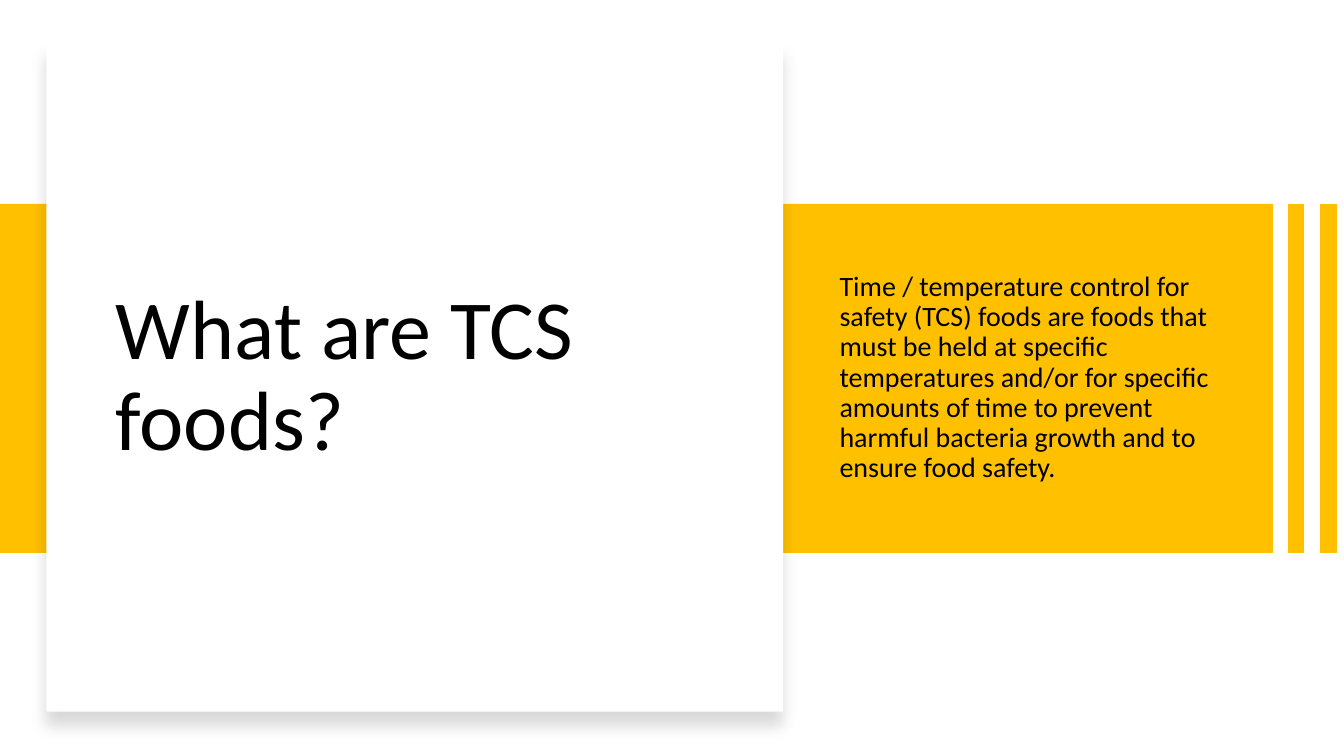
from dataclasses import dataclass

from lxml.etree import SubElement
from pptx import Presentation
from pptx.dml.color import RGBColor
from pptx.enum.shapes import MSO_CONNECTOR, MSO_SHAPE
from pptx.enum.text import MSO_ANCHOR
from pptx.oxml.ns import qn
from pptx.util import Pt


@dataclass(frozen=True)
class Theme:
    font: str = "Calibri"
    title_size: float = 60
    body_size: float = 20
    line_spacing: float = 0.9
    text: str = "000000"
    band: str = "FFC000"
    card: str = "FFFFFF"
    shadow: str = "000000"


class SlideBuilder:
    def __init__(self, page, theme):
        self.page = page
        self.theme = theme

    def rectangle(self, left, top, width, height, color):
        shape = self.page.shapes.add_shape(
            MSO_SHAPE.RECTANGLE, Pt(left), Pt(top), Pt(width), Pt(height))
        shape.shadow.inherit = False
        shape.fill.solid()
        shape.fill.fore_color.rgb = RGBColor.from_string(color)
        shape.line.fill.background()
        return shape

    def drop_shadow(self, shape, blur, distance, opacity):
        """Cast a soft shadow straight down; opacity is in percent."""
        effects = shape._element.spPr.find(qn("a:effectLst"))
        shadow = SubElement(
            effects, qn("a:outerShdw"), blurRad=str(Pt(blur)),
            dist=str(Pt(distance)), dir=str(90 * 60000),
            algn="t", rotWithShape="0")
        color = SubElement(shadow, qn("a:srgbClr"), val=self.theme.shadow)
        SubElement(color, qn("a:alpha"), val=str(opacity * 1000))

    def vertical_line(self, x, top, height, width, color):
        line = self.page.shapes.add_connector(
            MSO_CONNECTOR.STRAIGHT, Pt(x), Pt(top), Pt(x), Pt(top + height))
        line.line.color.rgb = RGBColor.from_string(color)
        line.line.width = Pt(width)
        SubElement(line._element.spPr, qn("a:effectLst"))

    def text(self, left, top, width, height, content, size):
        box = self.page.shapes.add_textbox(
            Pt(left), Pt(top), Pt(width), Pt(height))
        frame = box.text_frame
        frame.word_wrap = True
        frame.vertical_anchor = MSO_ANCHOR.MIDDLE
        para = frame.paragraphs[0]
        para.line_spacing = self.theme.line_spacing
        span = para.add_run()
        span.text = content
        span.font.name = self.theme.font
        span.font.size = Pt(size)
        span.font.color.rgb = RGBColor.from_string(self.theme.text)


def main():
    deck = Presentation()
    deck.slide_width, deck.slide_height = Pt(960), Pt(540)
    theme = Theme()
    builder = SlideBuilder(deck.slides.add_slide(deck.slide_layouts[6]), theme)

    # Yellow band with two stripes at its right end
    band_top, band_height = 145.6, 249.4
    builder.rectangle(0, band_top, 909.2, band_height, theme.band)
    for stripe_x in (925.7, 948.9):
        builder.vertical_line(stripe_x, band_top, band_height, 12, theme.band)

    # White card that carries the title
    card = builder.rectangle(33.1, 31, 526.3, 477.4, theme.card)
    builder.drop_shadow(card, blur=11, distance=10, opacity=15)
    builder.text(75.6, 76.3, 440.6, 387.4, "What are TCS foods?",
                 theme.title_size)

    # Definition on the band
    builder.text(
        592.6, 186.5, 285.1, 167,
        "Time / temperature control for safety (TCS) foods are foods that "
        "must be held at specific temperatures and/or for specific amounts "
        "of time to prevent harmful bacteria growth and to ensure food safety.",
        theme.body_size)

    deck.save("out.pptx")


if __name__ == "__main__":
    main()
